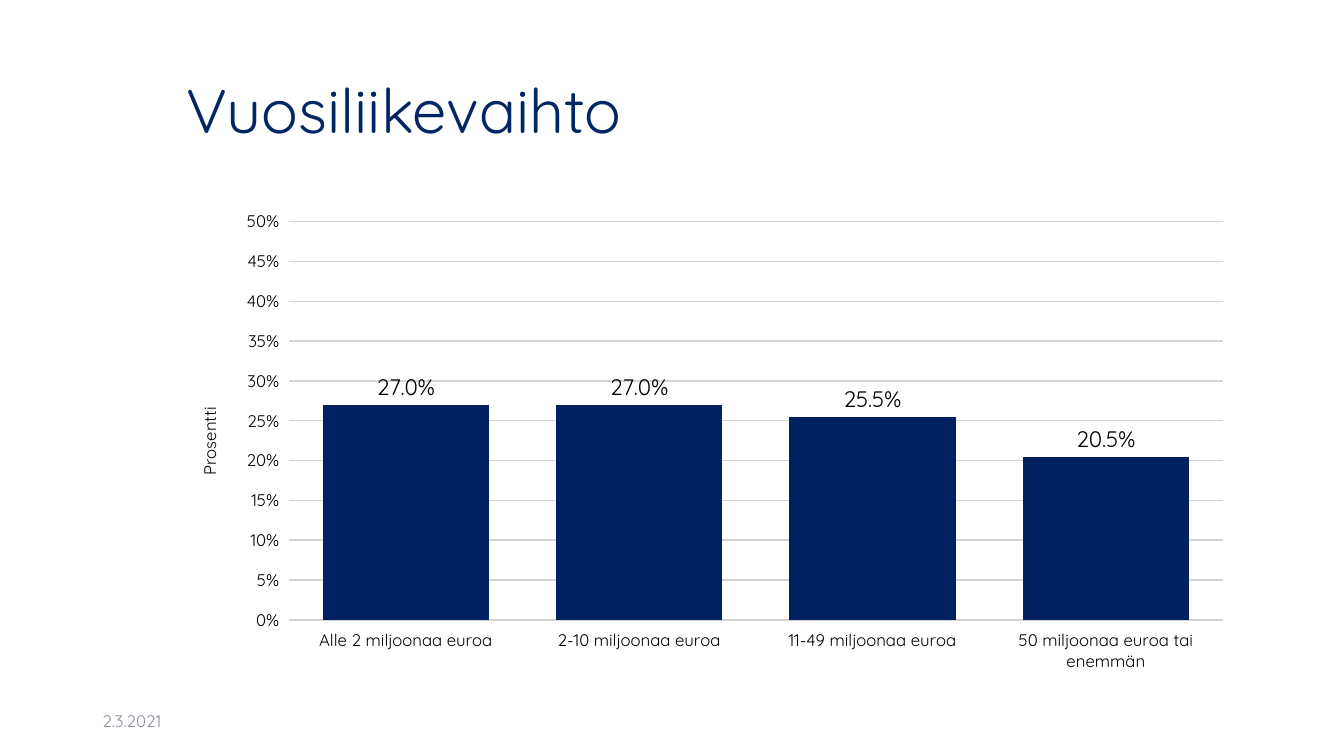
"""Build a slide with a column chart of yearly turnover."""
import pptx
import pptx.chart.data
import pptx.dml.color
import pptx.enum.chart
import pptx.enum.text
import pptx.util

Pt = pptx.util.Pt
FONT = "Quicksand"
COLORS = {"title": "002663", "date": "8C8E9F", "bar": "002060",
          "grid": "D3D3D3", "text": "000000"}
RGB = {key: pptx.dml.color.RGBColor.from_string(hue)
       for key, hue in COLORS.items()}


def write(frame, text, size, color, lines=1.0):
    frame.text = text
    frame.word_wrap = True
    frame.vertical_anchor = pptx.enum.text.MSO_ANCHOR.MIDDLE
    para = frame.paragraphs[0]
    para.alignment = pptx.enum.text.PP_ALIGN.LEFT
    para.line_spacing = lines
    font = para.runs[0].font
    font.name, font.size, font.color.rgb = FONT, Pt(size), RGB[color]


deck = pptx.Presentation()
deck.slide_width, deck.slide_height = Pt(960), Pt(540)
slide = deck.slides.add_slide(deck.slide_layouts[5])

title = slide.shapes.title
title.left, title.top, title.width, title.height = Pt(126), Pt(28.8), Pt(762.5), Pt(104.4)
write(title.text_frame, "Vuosiliikevaihto", size=44, color="title", lines=0.9)

date = slide.shapes.add_textbox(Pt(66), Pt(500.5), Pt(216), Pt(28.8))
write(date.text_frame, "2.3.2021", size=12, color="date")

data = pptx.chart.data.CategoryChartData(number_format="0.0%")
data.categories = ["Alle 2 miljoonaa euroa", "2-10 miljoonaa euroa",
                   "11-49 miljoonaa euroa", "50 miljoonaa euroa tai enemmän"]
data.add_series("Series 1", [0.27, 0.27, 0.255, 0.205])
chart = slide.shapes.add_chart(
    pptx.enum.chart.XL_CHART_TYPE.COLUMN_CLUSTERED,
    Pt(126), Pt(144), Pt(762.5), Pt(342.7), data).chart
chart.has_legend = False
chart.has_title = False
chart.font.name, chart.font.size = FONT, Pt(11)
chart.font.color.rgb = RGB["text"]

for axis in (chart.category_axis, chart.value_axis):
    axis.tick_labels.font.size = Pt(12)
    axis.tick_labels.font.name = FONT
    axis.tick_labels.font.color.rgb = RGB["text"]
    axis.format.line.fill.background()

scale = chart.value_axis
scale.minimum_scale, scale.maximum_scale, scale.major_unit = 0, 0.5, 0.05
scale.tick_labels.number_format = "0%"
scale.tick_labels.number_format_is_linked = False
grid = scale.major_gridlines.format.line
grid.width, grid.color.rgb = Pt(1), RGB["grid"]
head = scale.axis_title.text_frame
head.text = "Prosentti"
font = head.paragraphs[0].runs[0].font
font.name, font.size, font.bold = FONT, Pt(12), False
font.color.rgb = RGB["text"]

plot = chart.plots[0]
plot.gap_width = 40
plot.vary_by_categories = False
bars = plot.series[0]
bars.format.fill.solid()
bars.format.fill.fore_color.rgb = RGB["bar"]
labels = bars.data_labels
labels.show_value = True
labels.position = pptx.enum.chart.XL_LABEL_POSITION.OUTSIDE_END
labels.number_format = "0.0%"
labels.number_format_is_linked = False
labels.font.name, labels.font.size = FONT, Pt(16)
labels.font.color.rgb = RGB["text"]

deck.save("out.pptx")
